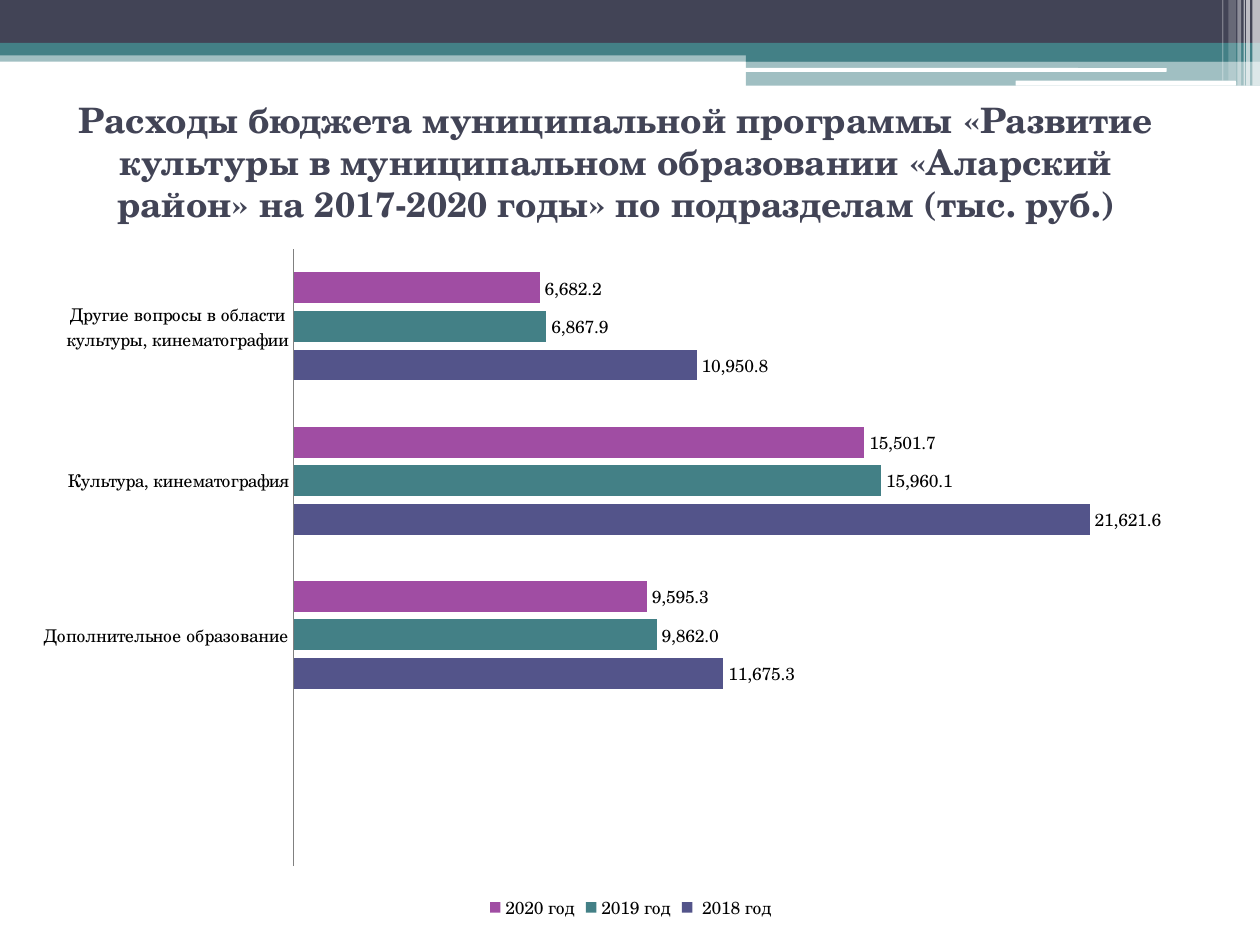
from lxml import etree
from pptx import Presentation
from pptx.chart.data import CategoryChartData
from pptx.dml.color import RGBColor
from pptx.enum.chart import XL_CHART_TYPE, XL_LABEL_POSITION, XL_LEGEND_POSITION, XL_TICK_MARK
from pptx.enum.shapes import MSO_SHAPE
from pptx.enum.text import MSO_ANCHOR, PP_ALIGN
from pptx.oxml.ns import qn
from pptx.util import Inches, Pt

RECT, ROUND = MSO_SHAPE.RECTANGLE, MSO_SHAPE.ROUNDED_RECTANGLE
BAR = XL_CHART_TYPE.BAR_CLUSTERED
LABEL_END = XL_LABEL_POSITION.OUTSIDE_END
LEGEND_BOTTOM = XL_LEGEND_POSITION.BOTTOM
NO_TICK = XL_TICK_MARK.NONE
MIDDLE, CENTER = MSO_ANCHOR.MIDDLE, PP_ALIGN.CENTER

FONT = "TeX Gyre Schola"
NUMBER_FORMAT = "#,##0.0"
COLORS = {
    "dark": "424456",
    "teal": "438086",
    "white": "FFFFFF",
    "black": "000000",
    "axis": "808080",
    "2018": "53548A",
    "2019": "438086",
    "2020": "A04DA3",
}

TITLE = (
    "Расходы бюджета муниципальной программы «Развитие культуры "
    "в муниципальном образовании «Аларский район» на 2017-2020 годы» "
    "по подразделам (тыс. руб.)"
)
CATEGORIES = [
    "",
    "Дополнительное образование",
    "Культура, кинематография",
    "Другие вопросы в области культуры, кинематографии",
]
SERIES = [
    (" 2018 год", "2018", [None, 11675.3, 21621.6, 10950.8]),
    ("2019 год", "2019", [None, 9862.0, 15960.1, 6867.9]),
    ("2020 год", "2020", [None, 9595.3, 15501.7, 6682.2]),
]
BANDS = [
    (RECT, 0, 0.4, 10, 0.09, "teal", 50),
    (RECT, 0, 0, 10, 0.34, "dark", 100),
    (RECT, 0, 0.34, 10, 0.1, "teal", 100),
    (RECT, 5.92, 0.39, 4.08, 0.1, "teal", 100),
    (RECT, 5.92, 0.48, 4.08, 0.2, "teal", 50),
    (ROUND, 5.91, 0.54, 3.35, 0.03, "white", 100),
    (ROUND, 8.06, 0.64, 1.75, 0.04, "white", 100),
]
STRIPES = [
    (9.94, 0.06, 0.68, 65),
    (9.89, 0.03, 0.68, 65),
    (9.87, 0.01, 0.68, 60),
    (9.82, 0.03, 0.68, 40),
    (9.75, 0.06, 0.64, 20),
    (9.7, 0.01, 0.64, 30),
]
PLOT_LAYOUT = {"x": 0.224, "y": 0.02, "w": 0.754, "h": 0.895}


def rgb(name):
    return RGBColor.from_string(COLORS[name])


def style_font(font, size, color, bold=False):
    font.name = FONT
    font.size = Pt(size)
    font.bold = bold
    font.color.rgb = rgb(color)


def add_band(slide, kind, x, y, w, h, color, opacity):
    sp = slide.shapes.add_shape(kind, Inches(x), Inches(y), Inches(w), Inches(h))
    sp.shadow.inherit = False
    sp.fill.solid()
    sp.fill.fore_color.rgb = rgb(color)
    sp.line.fill.background()
    if opacity < 100:
        clr = sp.fill._xPr.find(".//" + qn("a:srgbClr"))
        etree.SubElement(clr, qn("a:alpha"), val=str(opacity * 1000))


def add_header(slide, x, y):
    for kind, dx, dy, w, h, color, opacity in BANDS:
        add_band(slide, kind, x + dx, y + dy, w, h, color, opacity)
    for dx, w, h, opacity in STRIPES:
        add_band(slide, RECT, x + dx, y, w, h, "white", opacity)


def add_title(slide, x, y, w, h):
    box = slide.shapes.add_textbox(Inches(x), Inches(y), Inches(w), Inches(h))
    tf = box.text_frame
    tf.word_wrap = True
    tf.vertical_anchor = MIDDLE
    p = tf.paragraphs[0]
    p.text = TITLE
    p.alignment = CENTER
    style_font(p.font, 20, "dark", True)


def set_plot_layout(chart):
    area = chart.element.find(".//" + qn("c:plotArea"))
    for old in area.findall(qn("c:layout")):
        area.remove(old)
    layout = etree.Element(qn("c:layout"))
    manual = etree.SubElement(layout, qn("c:manualLayout"))
    etree.SubElement(manual, qn("c:layoutTarget"), val="inner")
    for side in "xy":
        etree.SubElement(manual, qn(f"c:{side}Mode"), val="edge")
    for key, value in PLOT_LAYOUT.items():
        etree.SubElement(manual, qn(f"c:{key}"), val=str(value))
    area.insert(0, layout)


def add_budget_chart(slide, x, y, w, h):
    data = CategoryChartData(number_format=NUMBER_FORMAT)
    data.categories = CATEGORIES
    for name, _, values in SERIES:
        data.add_series(name, values)
    chart = slide.shapes.add_chart(
        BAR, Inches(x), Inches(y), Inches(w), Inches(h), data
    ).chart
    style_font(chart.font, 10, "black")
    chart.has_title = False
    chart.has_legend = True
    chart.legend.position = LEGEND_BOTTOM
    chart.legend.include_in_layout = False

    axis = chart.category_axis
    axis.major_tick_mark = axis.minor_tick_mark = NO_TICK
    axis.format.line.color.rgb = rgb("axis")
    axis.format.line.width = Pt(1)
    values_axis = chart.value_axis
    values_axis.visible = False
    values_axis.has_major_gridlines = False
    values_axis.minimum_scale = 0
    values_axis.maximum_scale = 25000
    values_axis.tick_labels.number_format = NUMBER_FORMAT
    values_axis.tick_labels.number_format_is_linked = False

    plot = chart.plots[0]
    plot.vary_by_categories = False
    plot.gap_width = 150
    plot.overlap = -25
    for series, (_, color, _) in zip(plot.series, SERIES):
        series.format.fill.solid()
        series.format.fill.fore_color.rgb = rgb(color)
        labels = series.data_labels
        labels.show_value = True
        labels.number_format = NUMBER_FORMAT
        labels.number_format_is_linked = False
        labels.position = LABEL_END
    set_plot_layout(chart)


def main():
    prs = Presentation()
    prs.slide_width, prs.slide_height = Inches(10), Inches(7.5)
    slide = prs.slides.add_slide(prs.slide_layouts[6])
    add_header(slide, 0, 0)
    add_title(slide, 0.39, 0.7, 9, 1.17)
    add_budget_chart(slide, 0.16, 1.87, 9.69, 5.47)
    prs.save("out.pptx")


if __name__ == "__main__":
    main()
